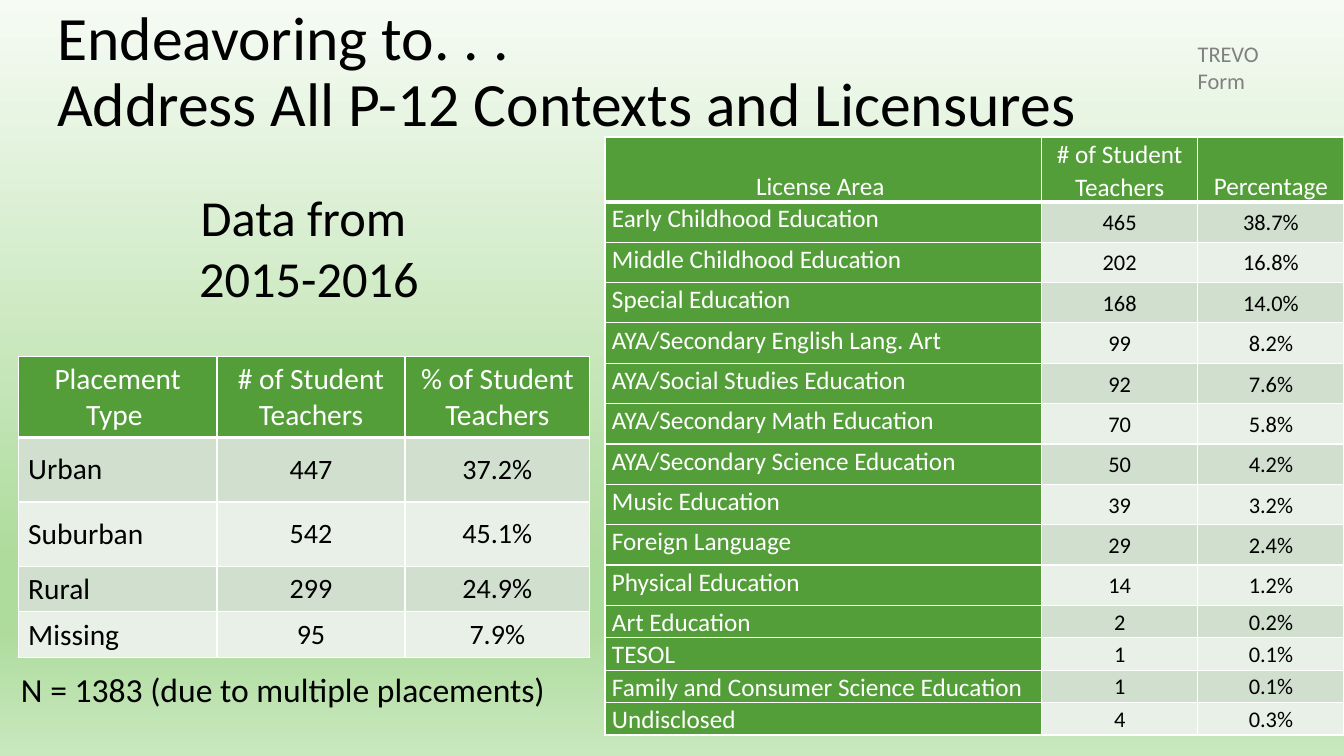
"""Builds the slide on student teacher placements and license areas."""
from copy import deepcopy

from lxml import etree
from pptx import Presentation
from pptx import util as u
from pptx.dml.color import RGBColor
from pptx.enum import text
from pptx.oxml.ns import qn

FONT = "Calibri"
BLACK = RGBColor(0, 0, 0)
WHITE = RGBColor(255, 255, 255)
GRAY = RGBColor(0x80, 0x80, 0x80)
GREEN = RGBColor(0x54, 0x9E, 0x39)
BANDS = RGBColor(0xD1, 0xDF, 0xCE), RGBColor(0xE9, 0xF0, 0xE8)
BACKDROP = [
    (0, RGBColor(0xF6, 0xFB, 0xF4)),
    (0.74, RGBColor(0xAE, 0xDC, 0x9D)),
    (0.83, RGBColor(0xAE, 0xDC, 0x9D)),
    (1, RGBColor(0xC9, 0xE8, 0xBE)),
]
LEFT, CENTER = text.PP_ALIGN.LEFT, text.PP_ALIGN.CENTER
TOP, MIDDLE, BOTTOM = (text.MSO_ANCHOR.TOP, text.MSO_ANCHOR.MIDDLE,
                       text.MSO_ANCHOR.BOTTOM)

PLACEMENTS = [
    ("Placement Type ", "# of Student Teachers", "% of Student Teachers"),
    ("Urban", "447", "37.2%"),
    ("Suburban", "542", "45.1%"),
    ("Rural", "299", "24.9%"),
    ("Missing", "95", "7.9%"),
]
LICENSES = [
    ("License Area ", "# of Student Teachers", "Percentage"),
    ("Early Childhood Education", "465", "38.7%"),
    ("Middle Childhood Education", "202", "16.8%"),
    ("Special Education", "168", "14.0%"),
    ("AYA/Secondary English Lang. Art", "99", "8.2%"),
    ("AYA/Social Studies Education", "92", "7.6%"),
    ("AYA/Secondary Math Education", "70", "5.8%"),
    ("AYA/Secondary Science Education", "50", "4.2%"),
    ("Music Education", "39", "3.2%"),
    ("Foreign Language", "29", "2.4%"),
    ("Physical Education", "14", "1.2%"),
    ("Art Education", "2", "0.2%"),
    ("TESOL", "1", "0.1%"),
    ("Family and Consumer Science Education", "1", "0.1%"),
    ("Undisclosed", "4", "0.3%"),
]


def style(p, size, color, align=LEFT, spacing=None):
    """Set the font, alignment and line spacing of a paragraph."""
    p.font.name, p.font.size, p.font.color.rgb = FONT, u.Pt(size), color
    p.alignment = align
    if spacing:
        p.line_spacing = spacing


def paint_background(s):
    """Fill the slide with the vertical green gradient."""
    fill = s.background.fill
    fill.gradient()
    fill.gradient_angle = 270
    stops = next(s.element.iter(qn("a:gsLst")))
    for _ in BACKDROP[len(stops):]:
        stops.append(deepcopy(stops[0]))
    for stop, (position, color) in zip(fill.gradient_stops, BACKDROP):
        stop.position, stop.color.rgb = position, color


def add_label(s, box, lines, size, color=BLACK, align=LEFT, spacing=None,
              anchor=TOP, wrap=True):
    """Place lines of text in a box, one paragraph each."""
    tf = s.shapes.add_textbox(*map(u.Inches, box)).text_frame
    tf.word_wrap, tf.vertical_anchor = wrap, anchor
    tf.text = "\n".join(lines)
    for p in tf.paragraphs:
        style(p, size, color, align, spacing)


def add_borders(cell, row):
    """Draw white cell borders, thick between the header and the body."""
    tcPr = cell._tc.get_or_add_tcPr()
    thick = {0: "lnB", 1: "lnT"}.get(row)
    for index, side in enumerate(("lnL", "lnR", "lnT", "lnB")):
        ln = etree.Element(qn(f"a:{side}"), w=str(u.Pt(3 if side == thick else 1)))
        solid = etree.SubElement(ln, qn("a:solidFill"))
        etree.SubElement(solid, qn("a:srgbClr"), val=str(WHITE))
        tcPr.insert(index, ln)


def add_grid(s, box, data, columns, heights):
    """Place a banded table in a box and return it with its cells filled in."""
    table = s.shapes.add_table(len(data), len(columns), *map(u.Inches, box)).table
    table.first_row = table.horz_banding = False
    for column, width in zip(table.columns, columns):
        column.width = u.Inches(box[2] * width / sum(columns))
    for row, height in zip(table.rows, heights):
        row.height = u.Inches(box[3] * height / sum(heights))
    for r, values in enumerate(data):
        for c, value in enumerate(values):
            cell = table.cell(r, c)
            cell.text = value
            cell.fill.solid()
            cell.fill.fore_color.rgb = BANDS[(r + 1) % 2] if r else GREEN
            add_borders(cell, r)
    return table


def add_placements(s, box):
    """Place the table of placement types."""
    table = add_grid(s, box, PLACEMENTS, (1.97, 1.86, 1.83),
                     [0.79, 0.64, 0.64, 0.45, 0.45])
    for r in range(len(PLACEMENTS)):
        for c in range(3):
            cell = table.cell(r, c)
            cell.vertical_anchor = MIDDLE if r else TOP
            style(cell.text_frame.paragraphs[0], 20 if r and c else 21,
                  BLACK if r else WHITE, CENTER if c or not r else LEFT)


def add_licenses(s, box):
    """Place the table of license areas."""
    tall = 10
    short = len(LICENSES) - 1 - tall
    table = add_grid(s, box, LICENSES, (4.33, 1.55, 1.45),
                     [0.64] + [0.4] * tall + [0.32] * short)
    for r in range(len(LICENSES)):
        for c in range(3):
            cell = table.cell(r, c)
            figure = r and c
            cell.margin_left = cell.margin_right = u.Inches(0.07)
            cell.margin_top = cell.margin_bottom = 0
            if not r:
                cell.vertical_anchor = BOTTOM
            else:
                cell.vertical_anchor = MIDDLE if c or r > tall else TOP
            if not c:
                cell.fill.fore_color.rgb = GREEN
            p = cell.text_frame.paragraphs[0]
            style(p, 16 if figure else 18, BLACK if figure else WHITE,
                  CENTER if c or not r else LEFT, 1.07)
            if r and c == 1:
                for side in ("marL", "marR"):
                    p._p.get_or_add_pPr().set(side, str(u.Inches(0.04)))


def main():
    """Build and save the slide."""
    prs = Presentation()
    prs.slide_width, prs.slide_height = u.Inches(13.33), u.Inches(7.5)
    s = prs.slides.add_slide(prs.slide_layouts[6])
    paint_background(s)
    add_label(s, (0.47, 0.1, 13, 1.26),
              ["Endeavoring to. . .", "Address All P-12 Contexts and Licensures"],
              44, spacing=0.9, anchor=MIDDLE)
    add_label(s, (0.11, 6.59, 5.45, 0.5),
              ["N = 1383 (due to multiple placements)"], 24, wrap=False)
    add_label(s, (0.47, 1.8, 5.19, 1.31), ["Data from ", "2015-2016"], 36,
              align=CENTER)
    add_placements(s, (0.18, 3.54, 5.67, 2.97))
    add_licenses(s, (6, 1.36, 7.33, 5.93))
    add_label(s, (11.78, 0.35, 1.29, 0.37), ["TREVO Form"], 16, GRAY, wrap=False)
    prs.save("out.pptx")


if __name__ == "__main__":
    main()
